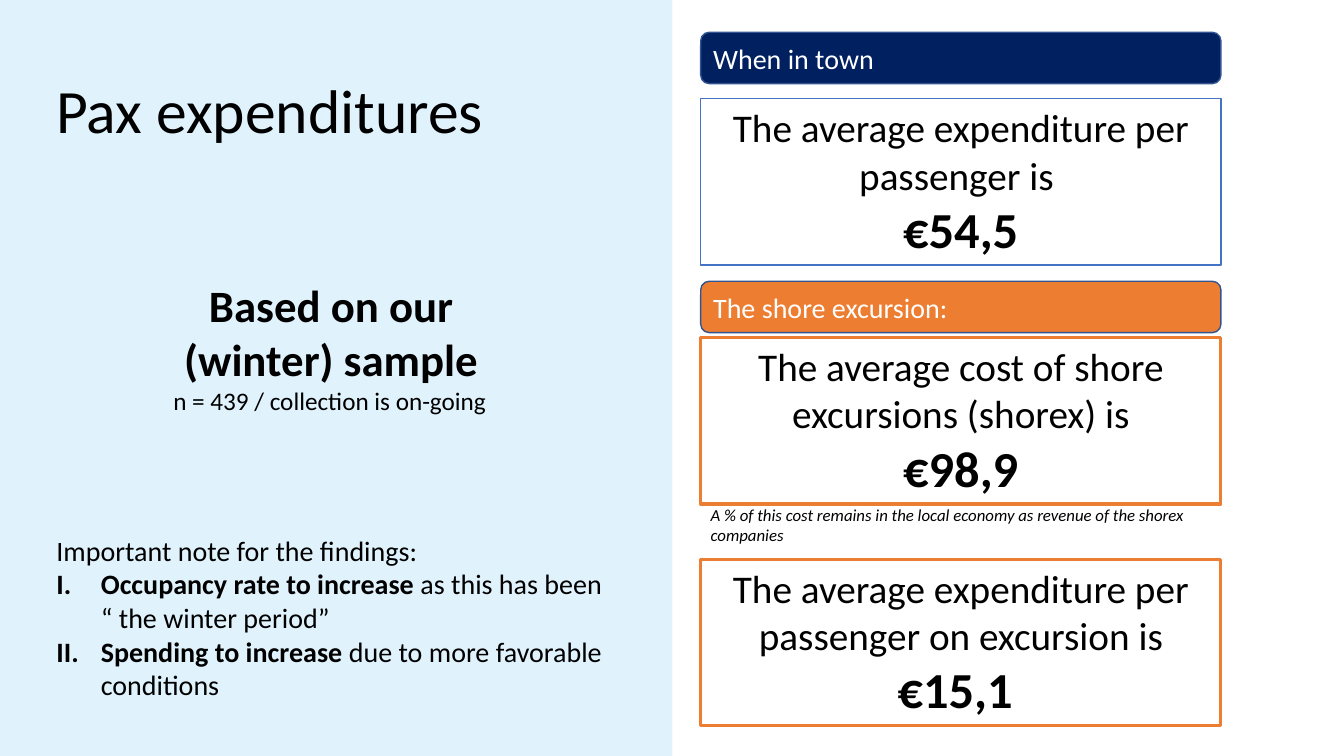
from lxml.etree import SubElement
from pptx import Presentation
from pptx.dml.color import RGBColor
from pptx.enum.shapes import MSO_SHAPE
from pptx.enum.text import MSO_ANCHOR, MSO_AUTO_SIZE, PP_ALIGN
from pptx.oxml.ns import qn
from pptx.util import Emu, Pt

BLACK = RGBColor(0x00, 0x00, 0x00)
WHITE = RGBColor(0xFF, 0xFF, 0xFF)
PALE = RGBColor(0xE0, 0xF3, 0xFC)
BLUE = RGBColor(0x44, 0x72, 0xC4)
NAVY = RGBColor(0x00, 0x20, 0x60)
EDGE = RGBColor(0x32, 0x54, 0x91)
ORANGE = RGBColor(0xED, 0x7D, 0x31)

LEFT, WIDE = 695, 516  # right-hand column
BAR, CARD = 51, 165  # heights of headings and cards


def px(num):
    """Turn px (100 to the inch) into EMU."""
    return Emu(num * 9144)


def write(frame, paras, size=20, color=BLACK, font="Calibri", italic=False,
          align=PP_ALIGN.LEFT, anchor=MSO_ANCHOR.TOP, space=1.0, wrap=True):
    """Fill a frame; each paragraph is a list of (text, size or None, bold) runs."""
    frame.word_wrap = wrap
    frame.auto_size = MSO_AUTO_SIZE.NONE
    frame.vertical_anchor = anchor
    for i, runs in enumerate(paras):
        para = frame.paragraphs[0] if i == 0 else frame.add_paragraph()
        para.alignment = align
        para.line_spacing = space
        para.space_before = para.space_after = Pt(0)
        for text, own, bold in runs:
            run = para.add_run()
            run.text = text
            run.font.name = font
            run.font.size = Pt(own or size)
            run.font.bold = bold
            run.font.italic = italic
            run.font.color.rgb = color


class Deck:
    def __init__(self):
        self.prs = Presentation()
        self.prs.slide_width, self.prs.slide_height = px(1333), px(750)
        self.slide = self.prs.slides.add_slide(self.prs.slide_layouts[1])
        self.shapes = self.slide.shapes

    def place(self, shape, box):
        shape.left, shape.top, shape.width, shape.height = map(px, box)

    def block(self, kind, box, fill=None, line=None, weight=1):
        shape = self.shapes.add_shape(kind, *map(px, box))
        shape.shadow.inherit = False
        if fill is None:
            shape.fill.background()
        else:
            shape.fill.solid()
            shape.fill.fore_color.rgb = fill
        if line is None:
            shape.line.fill.background()
        else:
            shape.line.color.rgb = line
            shape.line.width = Pt(weight)
        return shape

    def panel(self, box):
        """Put a plain backdrop behind the placeholders."""
        shape = self.block(MSO_SHAPE.RECTANGLE, box, PALE)
        self.shapes._spTree.insert(2, shape._element)

    def title(self, text, box):
        self.place(self.shapes.title, box)
        write(self.shapes.title.text_frame, [[(text, 44, False)]],
              anchor=MSO_ANCHOR.MIDDLE, space=0.9)

    def notes(self, head, items, box):
        """Write a lead line and a roman-numbered list in the body."""
        body = self.slide.placeholders[1]
        self.place(body, box)
        paras = [[(head, None, False)]]
        paras += [[(lead, None, True), (rest, None, False)] for lead, rest in items]
        write(body.text_frame, paras)
        for i, para in enumerate(body.text_frame.paragraphs):
            props = para._p.get_or_add_pPr()
            dent = px(44) if i else 0
            props.set("marL", str(dent))
            props.set("indent", str(-dent))
            if i:
                SubElement(props, qn("a:buFont"), typeface="+mj-lt")
                SubElement(props, qn("a:buAutoNum"), type="romanUcPeriod")
            else:
                SubElement(props, qn("a:buNone"))

    def label(self, text, box, size, bold=False, **form):
        shape = self.shapes.add_textbox(*map(px, box))
        write(shape.text_frame, [[(text, size, bold)]], **form)

    def bar(self, text, top, fill):
        shape = self.block(MSO_SHAPE.ROUNDED_RECTANGLE, (LEFT, top, WIDE, BAR), fill, EDGE)
        write(shape.text_frame, [[(text, 20, False)]], color=WHITE, anchor=MSO_ANCHOR.MIDDLE)

    def card(self, paras, top, line, weight, fill=None):
        shape = self.block(MSO_SHAPE.RECTANGLE, (LEFT, top, WIDE, CARD), fill, line, weight)
        write(shape.text_frame, paras, align=PP_ALIGN.CENTER)


def main():
    deck = Deck()
    deck.panel((0, 0, 667, 750))
    deck.title("Pax expenditures", (46, 40, 656, 145))

    town = ("The average expenditure per passenger is ", 28, False)
    shore = ("The average cost of shore excursions (shorex) is", 28, False)
    trip = ("The average expenditure per passenger on excursion is ", 28, False)
    deck.card([[town], [("€54,5", 36, True)]], 98, BLUE, 1, WHITE)
    deck.card([[shore], [("€98,9", 36, True)]], 335, ORANGE, 2.25)
    deck.card([[trip, ("€15,1 ", 36, True)]], 555, ORANGE, 2.25)

    deck.label("A % of this cost remains in the local economy as revenue of the shorex companies",
               (LEFT, 496, WIDE, 50), 12, italic=True)
    deck.label("Based on our (winter) sample", (130, 271, 397, 118), 32, True,
               align=PP_ALIGN.CENTER)
    deck.bar("When in town", 32, NAVY)
    deck.bar("The shore excursion:", 279, ORANGE)
    deck.notes("Important note for the findings:", [
        ("Occupancy rate to increase ", "as this has been “ the winter period”"),
        ("Spending to increase ", "due to more favorable conditions"),
    ], (46, 524, 566, 178))
    deck.label("n = 439 / collection is on-going", (162, 377, 335, 40), 18, wrap=False)
    deck.prs.save("out.pptx")


if __name__ == "__main__":
    main()
